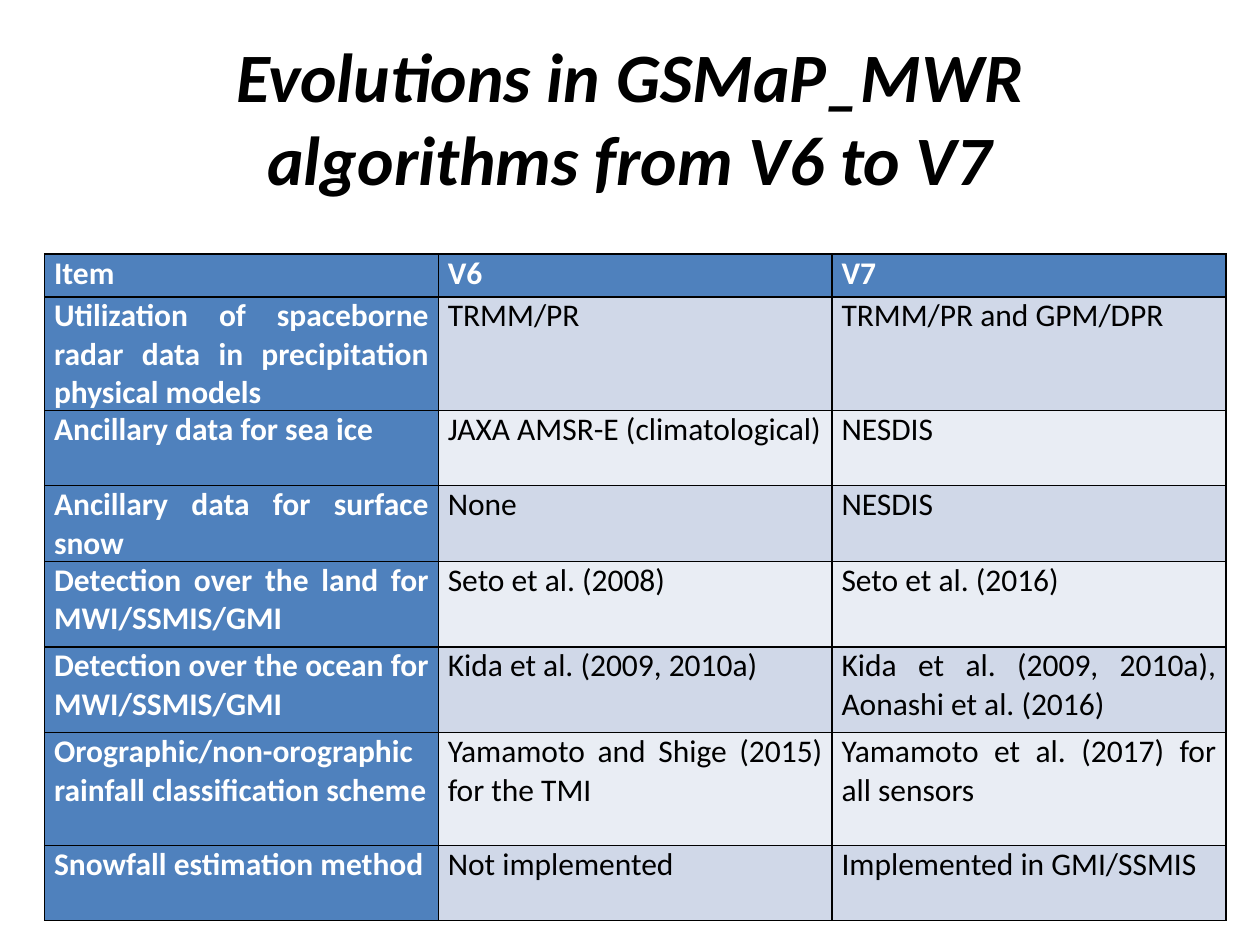
"""Build a slide comparing the V6 and V7 GSMaP_MWR algorithms in a table."""
from lxml.etree import SubElement
from pptx import Presentation
from pptx.dml.color import RGBColor
from pptx.enum.text import MSO_ANCHOR, PP_ALIGN
from pptx.oxml.ns import qn
from pptx.util import Pt

TITLE = "Evolutions in GSMaP_MWR algorithms from V6 to V7"
COMPARISON = [
    (24.5, "Item", "V6", "V7"),
    (59, "Utilization of spaceborne radar data in precipitation physical models",
     "TRMM/PR", "TRMM/PR and GPM/DPR"),
    (43, "Ancillary data for sea ice", "JAXA AMSR-E (climatological)", "NESDIS"),
    (43, "Ancillary data for surface snow", "None", "NESDIS"),
    (49, "Detection over the land for MWI/SSMIS/GMI",
     "Seto et al. (2008)", "Seto et al. (2016)"),
    (49, "Detection over the ocean for MWI/SSMIS/GMI",
     "Kida et al. (2009, 2010a)", "Kida et al. (2009, 2010a), Aonashi et al. (2016)"),
    (64.5, "Orographic/non-orographic rainfall classification scheme",
     "Yamamoto and Shige (2015) for the TMI", "Yamamoto et al. (2017) for all sensors"),
    (43, "Snowfall estimation method", "Not implemented", "Implemented in GMI/SSMIS"),
]

FONT = "Calibri"
BLACK = RGBColor(0x00, 0x00, 0x00)
WHITE = RGBColor(0xFF, 0xFF, 0xFF)
HEADER_BLUE = RGBColor(0x4F, 0x81, 0xBD)
BANDS = [RGBColor(0xE9, 0xED, 0xF4), RGBColor(0xD0, 0xD8, 0xE8)]
TABLE_LEFT, TABLE_TOP, COLUMN_WIDTH = 25.5, 145.2, 225


def write(frame, text, size=18, color=BLACK, bold=False, italic=False,
          align=PP_ALIGN.JUSTIFY):
    paragraph = frame.paragraphs[0]
    paragraph.alignment = align
    run = paragraph.add_run()
    run.text = text
    run.font.name = FONT
    run.font.size = Pt(size)
    run.font.bold = bold
    run.font.italic = italic
    run.font.color.rgb = color


def add_borders(cell, color=BLACK, width=1):
    properties = cell._tc.get_or_add_tcPr()
    for position, side in enumerate(("lnL", "lnR", "lnT", "lnB")):
        border = properties.makeelement(qn(f"a:{side}"), {"w": str(Pt(width))})
        fill = SubElement(border, qn("a:solidFill"))
        SubElement(fill, qn("a:srgbClr"), val=str(color))
        properties.insert(position, border)


def add_title(slide):
    title = slide.shapes.add_textbox(Pt(36), Pt(21.6), Pt(648), Pt(90)).text_frame
    title.word_wrap = True
    title.vertical_anchor = MSO_ANCHOR.MIDDLE
    write(title, TITLE, size=39.6, bold=True, italic=True, align=PP_ALIGN.CENTER)


def add_comparison(slide):
    columns = len(COMPARISON[0]) - 1
    table = slide.shapes.add_table(
        len(COMPARISON), columns, Pt(TABLE_LEFT), Pt(TABLE_TOP),
        Pt(columns * COLUMN_WIDTH), Pt(sum(row[0] for row in COMPARISON))).table
    for column in table.columns:
        column.width = Pt(COLUMN_WIDTH)
    for row_index, (height, *texts) in enumerate(COMPARISON):
        table.rows[row_index].height = Pt(height)
        for column_index, text in enumerate(texts):
            cell = table.cell(row_index, column_index)
            header = row_index == 0 or column_index == 0
            cell.margin_left = cell.margin_right = Pt(5.4)
            cell.margin_top = cell.margin_bottom = Pt(0)
            cell.fill.solid()
            cell.fill.fore_color.rgb = HEADER_BLUE if header else BANDS[row_index % 2]
            add_borders(cell)
            write(cell.text_frame, text, color=WHITE if header else BLACK, bold=header)


def main():
    presentation = Presentation()
    presentation.slide_width, presentation.slide_height = Pt(720), Pt(540)
    slide = presentation.slides.add_slide(presentation.slide_layouts[6])
    add_title(slide)
    add_comparison(slide)
    presentation.save("out.pptx")


if __name__ == "__main__":
    main()
